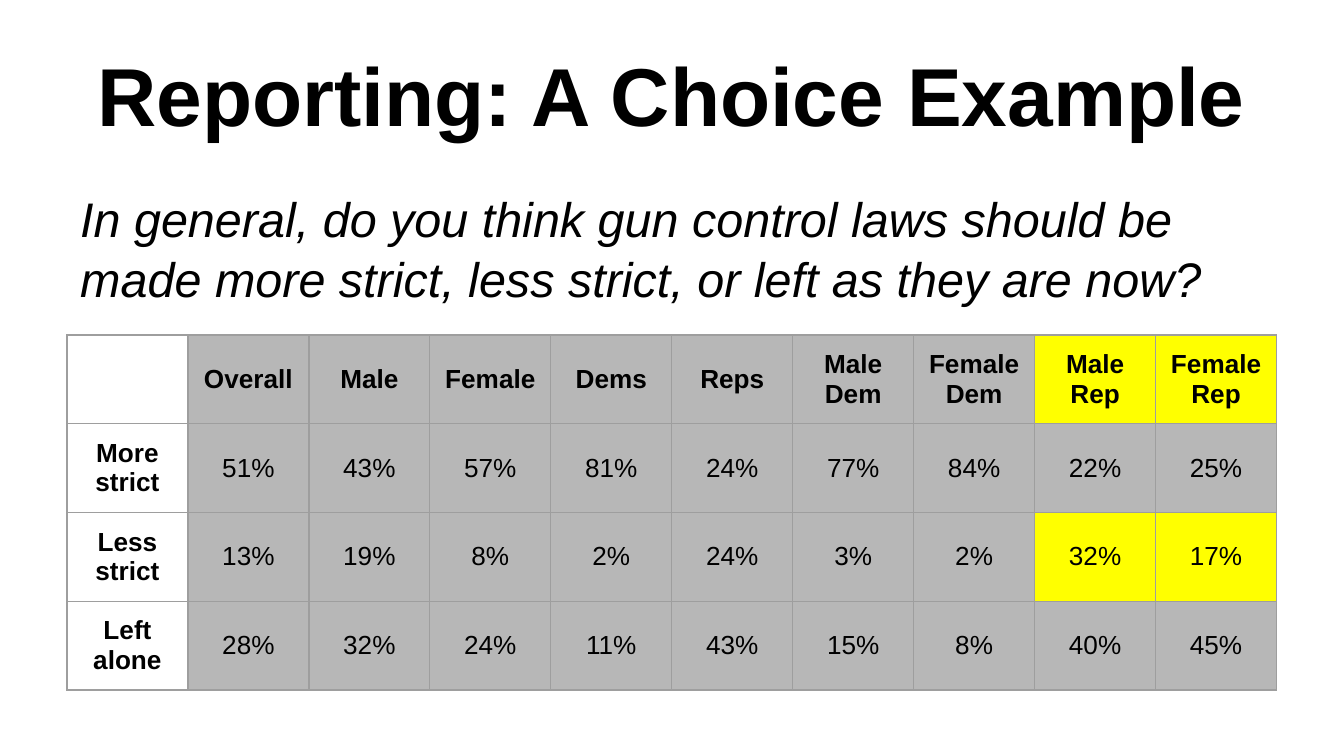
"""Build a slide with a survey question and its results table."""
from lxml.etree import SubElement as Sub
from pptx import Presentation
from pptx.dml.color import RGBColor as Rgb
from pptx.enum.text import MSO_ANCHOR as Anchor, PP_ALIGN as Align
from pptx.oxml.ns import qn
from pptx.util import Pt

PX = 914400 / 134.4
HUES = {"ink": "000000", "grey": "B7B7B7", "mark": "FFFF00", "line": "9E9E9E"}
TITLE = "Reporting: A Choice Example"
ASK = ("In general, do you think gun control laws should be made more strict, "
       "less strict, or left as they are now?")
HEADS = ["", "Overall", "Male", "Female", "Dems", "Reps",
         "Male Dem", "Female Dem", "Male Rep", "Female Rep"]
RATES = {
    "More strict": [51, 43, 57, 81, 24, 77, 84, 22, 25],
    "Less strict": [13, 19, 8, 2, 24, 3, 2, 32, 17],
    "Left alone": [28, 32, 24, 11, 43, 15, 8, 40, 45],
}
MARKED = {(row, col) for row in (0, 2) for col in (8, 9)}
LEFT, WIDTH = 67, 1210


def px(num):
    return round(num * PX)


def style(para, size, align, bold=False, italic=False):
    para.alignment = align
    font = para.font
    font.name, font.size = "Arial", Pt(size)
    font.bold, font.italic = bold, italic
    font.color.rgb = Rgb.from_string(HUES["ink"])


def add_text(slide, top, high, text, anchor, *look, **more):
    box = slide.shapes.add_textbox(px(LEFT), px(top), px(WIDTH), px(high))
    frame = box.text_frame
    frame.word_wrap = True
    frame.vertical_anchor = anchor
    frame.text = text
    style(frame.paragraphs[0], *look, **more)
    return frame.paragraphs[0]


def add_edges(cell):
    props = cell._tc.get_or_add_tcPr()
    for spot, side in enumerate(("lnL", "lnR", "lnT", "lnB")):
        line = Sub(props, qn("a:" + side), w=str(Pt(0.75)))
        fill = Sub(line, qn("a:solidFill"))
        Sub(fill, qn("a:srgbClr"), val=HUES["line"])
        props.insert(spot, line)


def fill_cell(cell, text, row, col):
    cell.text = text
    cell.vertical_anchor = Anchor.MIDDLE
    cell.margin_left = cell.margin_right = px(13)
    cell.margin_top = cell.margin_bottom = px(13)
    style(cell.text_frame.paragraphs[0], 14, Align.CENTER, row == 0 or col == 0)
    if col == 0:
        cell.fill.background()
    else:
        cell.fill.solid()
        hue = "mark" if (row, col) in MARKED else "grey"
        cell.fill.fore_color.rgb = Rgb.from_string(HUES[hue])
    add_edges(cell)


def add_grid(slide, top, high):
    rows = [HEADS] + [[name] + [f"{rate}%" for rate in rates]
                      for name, rates in RATES.items()]
    table = slide.shapes.add_table(len(rows), len(HEADS), px(LEFT), px(top),
                                   px(WIDTH), px(high)).table
    table.first_row = table.horz_banding = False
    for row, texts in enumerate(rows):
        for col, text in enumerate(texts):
            fill_cell(table.cell(row, col), text, row, col)


def main():
    deck = Presentation()
    deck.slide_width, deck.slide_height = px(1344), px(756)
    slide = deck.slides.add_slide(deck.slide_layouts[6])
    add_text(slide, 31, 126, TITLE, Anchor.MIDDLE, 44, Align.CENTER, bold=True)
    ask = add_text(slide, 180, 495, ASK, Anchor.TOP, 26, Align.LEFT, italic=True)
    ask.line_spacing = 1.04
    add_grid(slide, 335, 342)
    deck.save("out.pptx")


if __name__ == "__main__":
    main()
